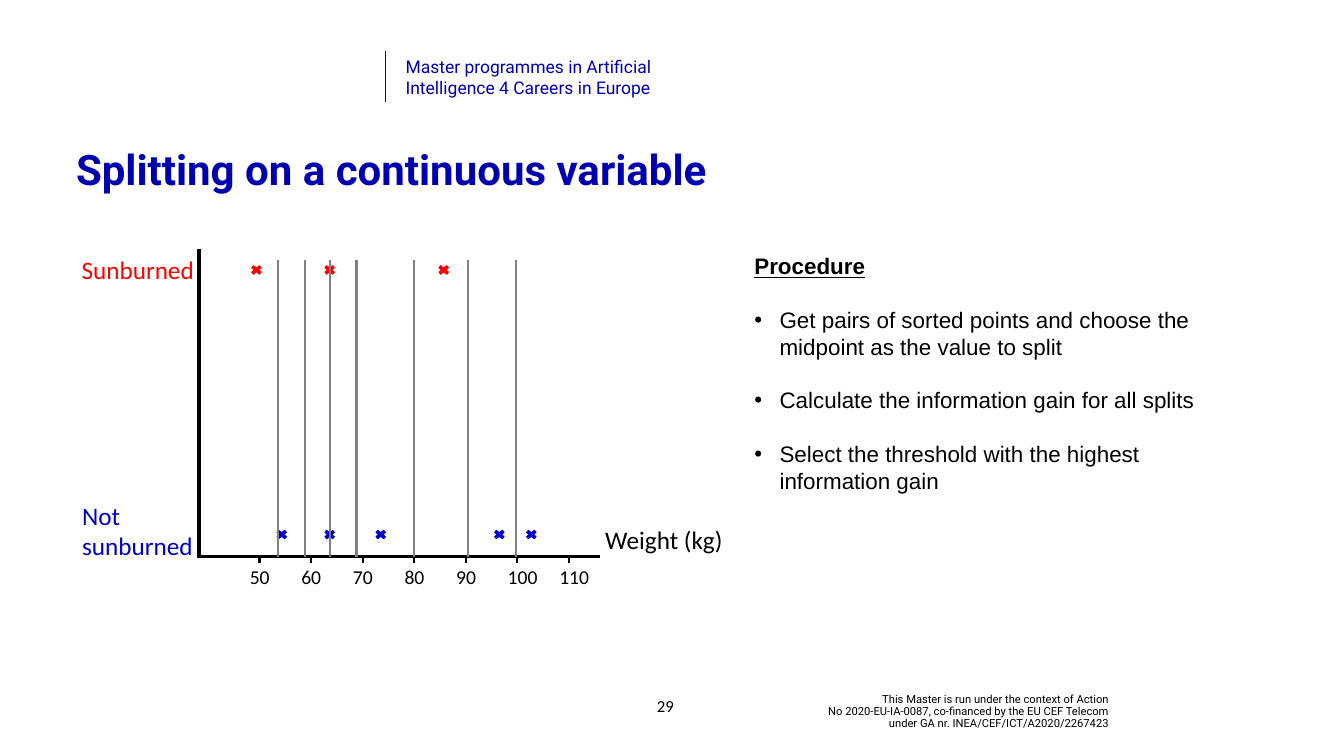
from dataclasses import dataclass
from lxml import etree
from pptx import Presentation
from pptx import util as u
from pptx.dml.color import RGBColor
from pptx.enum import shapes, text
from pptx.oxml import ns

NAVY = RGBColor(0x00, 0x00, 0xB0)
RED = RGBColor(0xFF, 0x00, 0x00)
BLUE = RGBColor(0x01, 0x00, 0xC8)
BLACK = RGBColor(0x00, 0x00, 0x00)
GREY = RGBColor(0x80, 0x80, 0x80)

# Weight axis, in points
AXIS_Y = 795.6
TICK_50 = 370.8
KG_WIDTH = 7.37


@dataclass
class Label:
    lines: list[str]
    left: float
    top: float
    width: float
    height: float
    size: float
    colour: RGBColor = BLACK
    font: str = "Calibri"
    align: text.PP_ALIGN = text.PP_ALIGN.LEFT
    anchor: text.MSO_ANCHOR = text.MSO_ANCHOR.TOP
    spacing: float = 1.0


@dataclass
class Line:
    x1: float
    y1: float
    x2: float
    y2: float
    width: float
    colour: RGBColor = BLACK


@dataclass
class Observations:
    weights: list[float]
    y: float
    colour: RGBColor


def weight_x(kg: float) -> float:
    return TICK_50 + (kg - 50) * KG_WIDTH


def place(shape, left: float, top: float, width: float, height: float) -> None:
    shape.left, shape.top = u.Pt(left), u.Pt(top)
    shape.width, shape.height = u.Pt(width), u.Pt(height)


def style(font, name: str, size: float, colour: RGBColor, bold: bool = False) -> None:
    font.name, font.size, font.bold = name, u.Pt(size), bold
    font.color.rgb = colour


def draw_label(page, label: Label) -> None:
    box = page.shapes.add_textbox(u.Pt(label.left), u.Pt(label.top),
                                  u.Pt(label.width), u.Pt(label.height))
    frame = box.text_frame
    frame.word_wrap = True
    frame.vertical_anchor = label.anchor
    para = frame.paragraphs[0]
    for number, line in enumerate(label.lines):
        if number:
            para.add_line_break()
        para.add_run().text = line
    para.alignment = label.align
    para.line_spacing = label.spacing
    style(para.font, label.font, label.size, label.colour)


def draw_line(page, line: Line) -> None:
    connector = page.shapes.add_connector(
        shapes.MSO_CONNECTOR.STRAIGHT,
        u.Pt(line.x1), u.Pt(line.y1), u.Pt(line.x2), u.Pt(line.y2))
    connector.line.width = u.Pt(line.width)
    connector.line.color.rgb = line.colour
    etree.SubElement(connector._element.spPr, ns.qn("a:effectLst"))


def draw_crosses(page, group: Observations) -> None:
    width, height = 21.6, 18
    for kg in group.weights:
        cross = page.shapes.add_shape(
            shapes.MSO_SHAPE.MATH_MULTIPLY,
            u.Pt(weight_x(kg) - width / 2), u.Pt(group.y - height / 2),
            u.Pt(width), u.Pt(height))
        cross.shadow.inherit = False
        cross.fill.solid()
        cross.fill.fore_color.rgb = group.colour
        cross.line.color.rgb = group.colour
        cross.line.width = u.Pt(1)


def set_bullet(para, bullet: str = "") -> None:
    props = para._p.get_or_add_pPr()
    indent = u.Pt(36) if bullet else 0
    props.set("marL", str(indent))
    props.set("indent", str(-indent))
    if bullet:
        etree.SubElement(props, ns.qn("a:buFont"), typeface="Arial")
        etree.SubElement(props, ns.qn("a:buChar"), char=bullet)
    else:
        etree.SubElement(props, ns.qn("a:buNone"))


def fill_title(title) -> None:
    place(title, 101.5, 203.8, 1700, 164.9)
    frame = title.text_frame
    frame.text = "Splitting on a continuous variable"
    frame.vertical_anchor = text.MSO_ANCHOR.TOP
    frame.auto_size = text.MSO_AUTO_SIZE.NONE
    para = frame.paragraphs[0]
    para.alignment = text.PP_ALIGN.LEFT
    para.line_spacing = u.Pt(70)
    style(para.font, "Roboto", 60, NAVY, bold=True)


def fill_procedure(body) -> None:
    place(body, 1070.6, 357.1, 730.8, 356.4)
    frame = body.text_frame
    frame.auto_size = text.MSO_AUTO_SIZE.NONE
    steps = [
        "Get pairs of sorted points and choose the midpoint as the value to split",
        "Calculate the information gain for all splits",
        "Select the threshold with the highest information gain",
    ]
    heading = frame.paragraphs[0]
    heading.text = "Procedure"
    set_bullet(heading)
    heading.space_before = u.Pt(0)
    style(heading.font, "Arial", 32, BLACK, bold=True)
    heading.font.underline = True
    for step in steps:
        para = frame.add_paragraph()
        para.text = step
        set_bullet(para, "•")
        para.space_before = u.Pt(38)
        style(para.font, "Arial", 32, BLACK)


def draw_chart(page) -> None:
    # Observations in each class
    draw_crosses(page, Observations([49.4, 63.6, 85.7], 385.6, RED))
    draw_crosses(page, Observations([54.3, 63.6, 73.5, 96.5, 102.7], 763.6, BLUE))

    # Class and axis names
    draw_label(page, Label(["Sunburned"], 109.4, 360, 231, 51, 36, RED))
    draw_label(page, Label(["Not", "sunburned"], 110.2, 710.6, 173.5, 94.5, 36, BLUE))
    draw_label(page, Label(["Weight (kg)"], 857.5, 745.2, 231, 51, 36))

    # Axes
    draw_line(page, Line(284.4, 356.4, 284.4, AXIS_Y, 4.5))
    draw_line(page, Line(857.5, AXIS_Y, 281.5, AXIS_Y, 4.5))

    # Ticks and their values
    for kg in range(50, 120, 10):
        x = weight_x(kg)
        draw_label(page, Label([str(kg)], x - 21, 803.5, 57.6, 41, 28))
        draw_line(page, Line(x, 805, x, 793.5, 3))

    # Candidate split thresholds
    for kg in (53.5, 58.9, 63.7, 68.8, 79.9, 90.5, 99.8):
        x = weight_x(kg)
        draw_line(page, Line(x, 370.8, x, AXIS_Y, 3, GREY))


def main() -> None:
    deck = Presentation()
    deck.slide_width, deck.slide_height = u.Pt(1920.24), u.Pt(1080)
    page = deck.slides.add_slide(deck.slide_layouts[1])

    # Footer, header and page number
    draw_label(page, Label(
        ["This Master is run under the context of Action",
         "No 2020-EU-IA-0087, co-financed by the EU CEF Telecom",
         "under GA nr. INEA/CEF/ICT/A2020/2267423"],
        1081.4, 989.3, 509.8, 54.7, 16, font="Roboto",
        align=text.PP_ALIGN.RIGHT, anchor=text.MSO_ANCHOR.MIDDLE, spacing=0.9))
    draw_line(page, Line(550.8, 72.7, 550.8, 146.2, 0.5, NAVY))
    draw_label(page, Label(
        ["Master programmes in Artificial", "Intelligence 4 Careers in Europe"],
        572.4, 76.3, 458.6, 67.7, 25, NAVY, "Roboto"))
    draw_label(page, Label(["29"], 910.8, 979.9, 79.9, 57.6, 24,
                           align=text.PP_ALIGN.CENTER, anchor=text.MSO_ANCHOR.MIDDLE))

    fill_title(page.shapes.title)
    draw_chart(page)
    fill_procedure(page.placeholders[1])
    deck.save("out.pptx")


if __name__ == "__main__":
    main()
